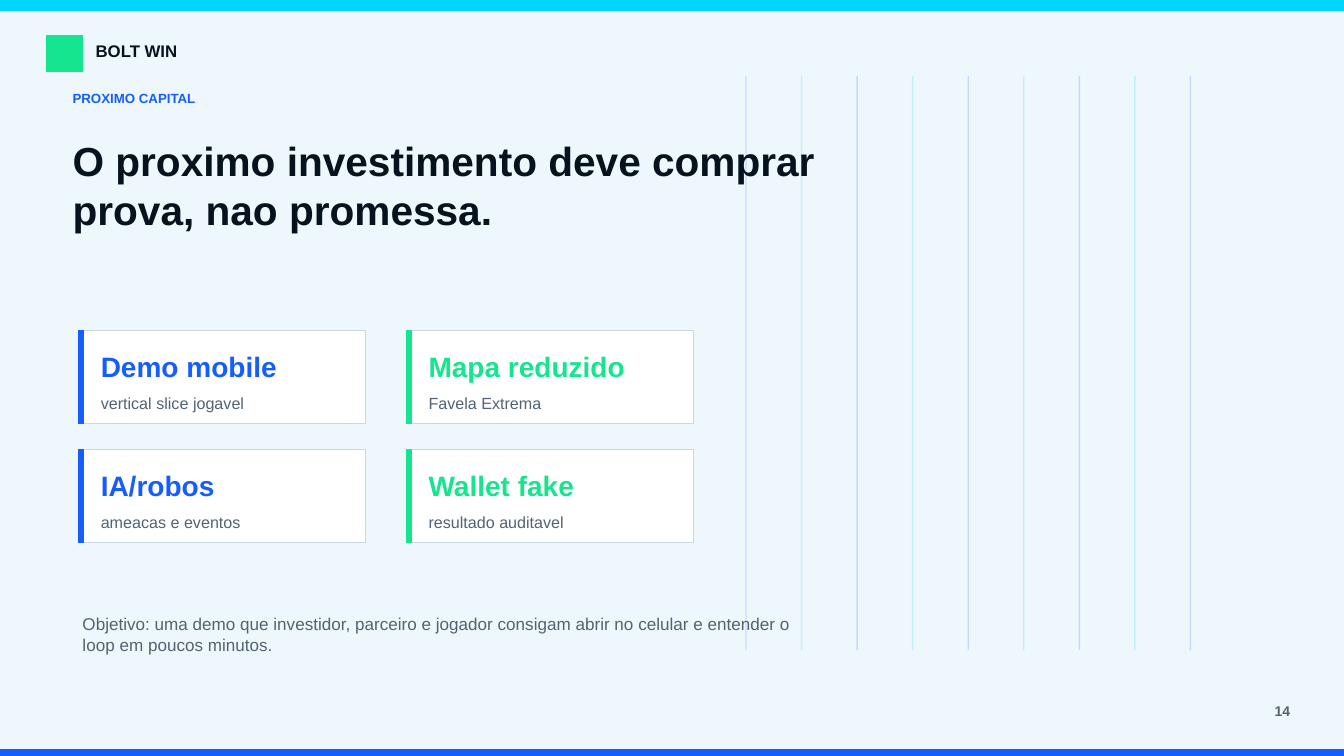
from dataclasses import dataclass

from lxml import etree
from pptx import Presentation
from pptx.dml.color import RGBColor
from pptx.enum.shapes import MSO_CONNECTOR, MSO_SHAPE
from pptx.enum.text import MSO_ANCHOR, PP_ALIGN
from pptx.oxml.ns import qn
from pptx.util import Cm, Pt

RECTANGLE = MSO_SHAPE.RECTANGLE
STRAIGHT = MSO_CONNECTOR.STRAIGHT
MIDDLE = MSO_ANCHOR.MIDDLE
LEFT, RIGHT = PP_ALIGN.LEFT, PP_ALIGN.RIGHT


@dataclass(frozen=True)
class Theme:
    """Colours, font and type sizes of the slide."""
    font: str = "Arial"
    paper: str = "EEF7FB"
    white: str = "FFFFFF"
    border: str = "C8D7E4"
    ink: str = "06131F"
    muted: str = "536373"
    blue: str = "155DFC"
    cyan: str = "02D5FF"
    green: str = "15E58F"
    title: float = 29
    card_title: float = 20
    goal: float = 12.2
    brand: float = 12
    card_note: float = 11.5
    page: float = 10
    kicker: float = 9.5


THEME = Theme()
MILESTONES = [
    ("Demo mobile", "vertical slice jogavel"),
    ("Mapa reduzido", "Favela Extrema"),
    ("IA/robos", "ameacas e eventos"),
    ("Wallet fake", "resultado auditavel"),
]


def add_text(slide, text, box, *, size, color, bold=False, align=LEFT):
    """Place one paragraph in a wrapped, vertically centred box without insets."""
    frame = slide.shapes.add_textbox(*map(Cm, box)).text_frame
    frame.word_wrap = True
    frame.vertical_anchor = MIDDLE
    frame.margin_left = frame.margin_right = 0
    frame.margin_top = frame.margin_bottom = 0
    paragraph = frame.paragraphs[0]
    paragraph.alignment = align
    run = paragraph.add_run()
    run.text = text
    run.font.name = THEME.font
    run.font.size = Pt(size)
    run.font.bold = bold
    run.font.color.rgb = RGBColor.from_string(color)


def add_block(slide, box, fill, outline=None):
    """Draw a flat rectangle, outlined in its own colour by default."""
    block = slide.shapes.add_shape(RECTANGLE, *map(Cm, box))
    block.shadow.inherit = False
    block.fill.solid()
    block.fill.fore_color.rgb = RGBColor.from_string(fill)
    block.line.color.rgb = RGBColor.from_string(outline or fill)
    block.line.width = Pt(1)


def add_stripe(slide, x, color):
    """Draw one faint vertical line of the backdrop."""
    stripe = slide.shapes.add_connector(STRAIGHT, Cm(x), Cm(1.91), Cm(x), Cm(16.38))
    stripe.line.color.rgb = RGBColor.from_string(color)
    stripe.line.width = Pt(1)
    properties = stripe.element.spPr
    tint = properties.find(".//" + qn("a:srgbClr"))
    etree.SubElement(tint, qn("a:alpha")).set("val", "18000")
    etree.SubElement(properties, qn("a:effectLst"))


def add_card(slide, x, y, milestone, note, accent):
    """Draw a milestone card with an accent edge."""
    add_block(slide, (x, y, 7.24, 2.34), THEME.white, THEME.border)
    add_block(slide, (x, y, 0.13, 2.34), accent)
    add_text(slide, milestone, (x + 0.56, y + 0.46, 6.38, 0.89),
             size=THEME.card_title, color=accent, bold=True)
    add_text(slide, note, (x + 0.56, y + 1.57, 6.38, 0.51),
             size=THEME.card_note, color=THEME.muted)


def add_backdrop(slide):
    """Paint the background, the edge bars and the stripes."""
    slide.background.fill.solid()
    slide.background.fill.fore_color.rgb = RGBColor.from_string(THEME.paper)
    add_block(slide, (0, 0, 33.87, 0.25), THEME.cyan)
    add_block(slide, (0, 18.9, 33.87, 0.15), THEME.blue)
    for index in range(9):
        add_stripe(slide, 18.8 + index * 1.4, (THEME.blue, THEME.cyan)[index % 2])


def add_header(slide):
    """Add the plain square, the name, the page number and the headings."""
    add_block(slide, (1.17, 0.89, 0.91, 0.91), THEME.green)
    add_text(slide, "BOLT WIN", (2.41, 1.04, 4.32, 0.46),
             size=THEME.brand, color=THEME.ink, bold=True)
    add_text(slide, "14", (31.19, 17.65, 1.32, 0.51),
             size=THEME.page, color=THEME.muted, bold=True, align=RIGHT)
    add_text(slide, "PROXIMO CAPITAL", (1.83, 2.19, 8.89, 0.56),
             size=THEME.kicker, color=THEME.blue, bold=True)
    add_text(slide, "O proximo investimento deve comprar prova, nao promessa.",
             (1.83, 3.13, 18.8, 3.05), size=THEME.title, color=THEME.ink, bold=True)


def main():
    """Build the slide and save it."""
    deck = Presentation()
    deck.slide_width, deck.slide_height = Cm(33.87), Cm(19.05)
    slide = deck.slides.add_slide(deck.slide_layouts[6])
    add_backdrop(slide)
    add_header(slide)
    for index, (milestone, note) in enumerate(MILESTONES):
        row, column = divmod(index, 2)
        add_card(slide, 1.98 + column * 8.26, 8.33 + row * 3, milestone, note,
                 (THEME.blue, THEME.green)[column])
    add_text(slide, "Objetivo: uma demo que investidor, parceiro e jogador consigam "
             "abrir no celular e entender o loop em poucos minutos.",
             (2.08, 15.45, 18.03, 1.07), size=THEME.goal, color=THEME.muted)
    deck.save("out.pptx")


if __name__ == "__main__":
    main()
